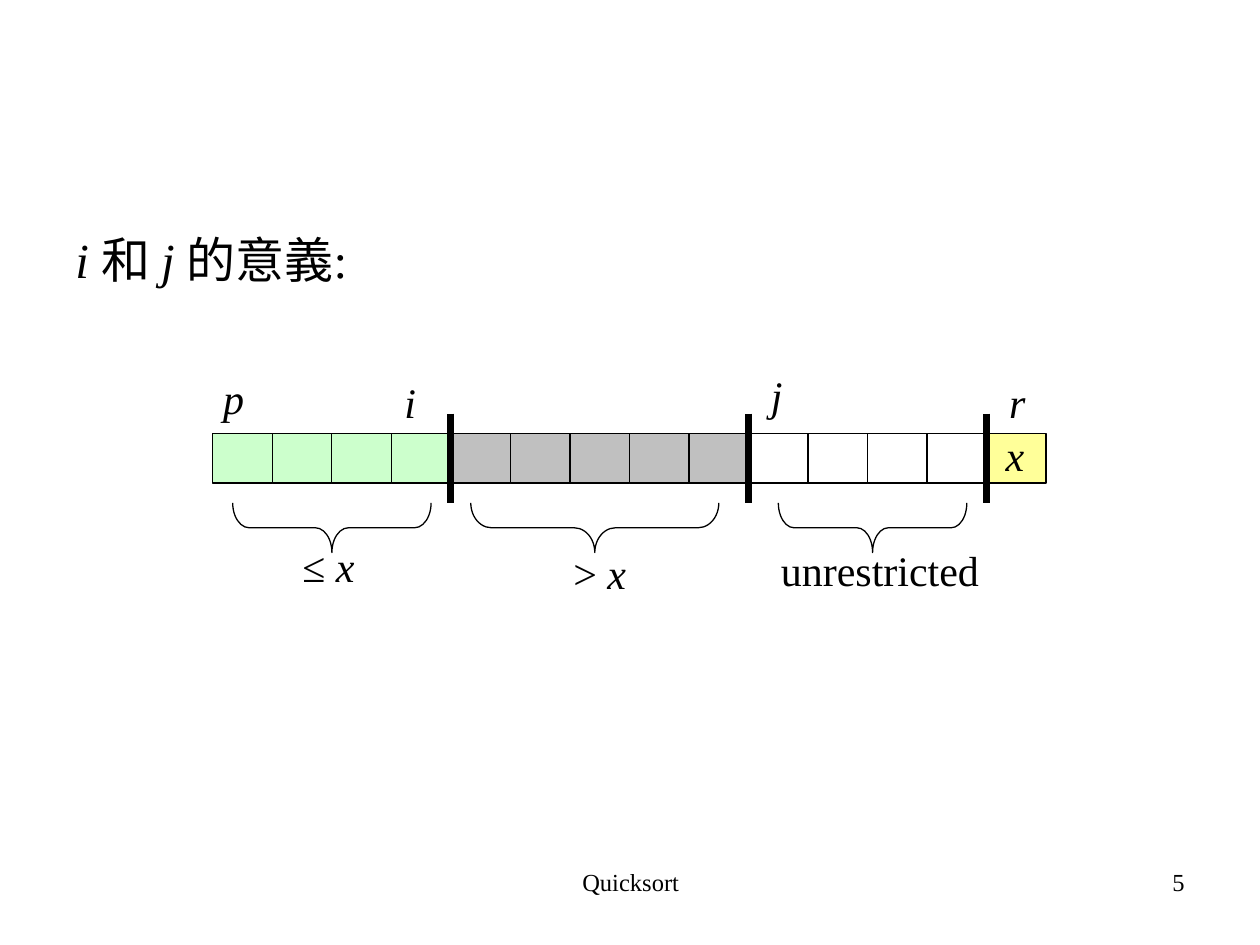
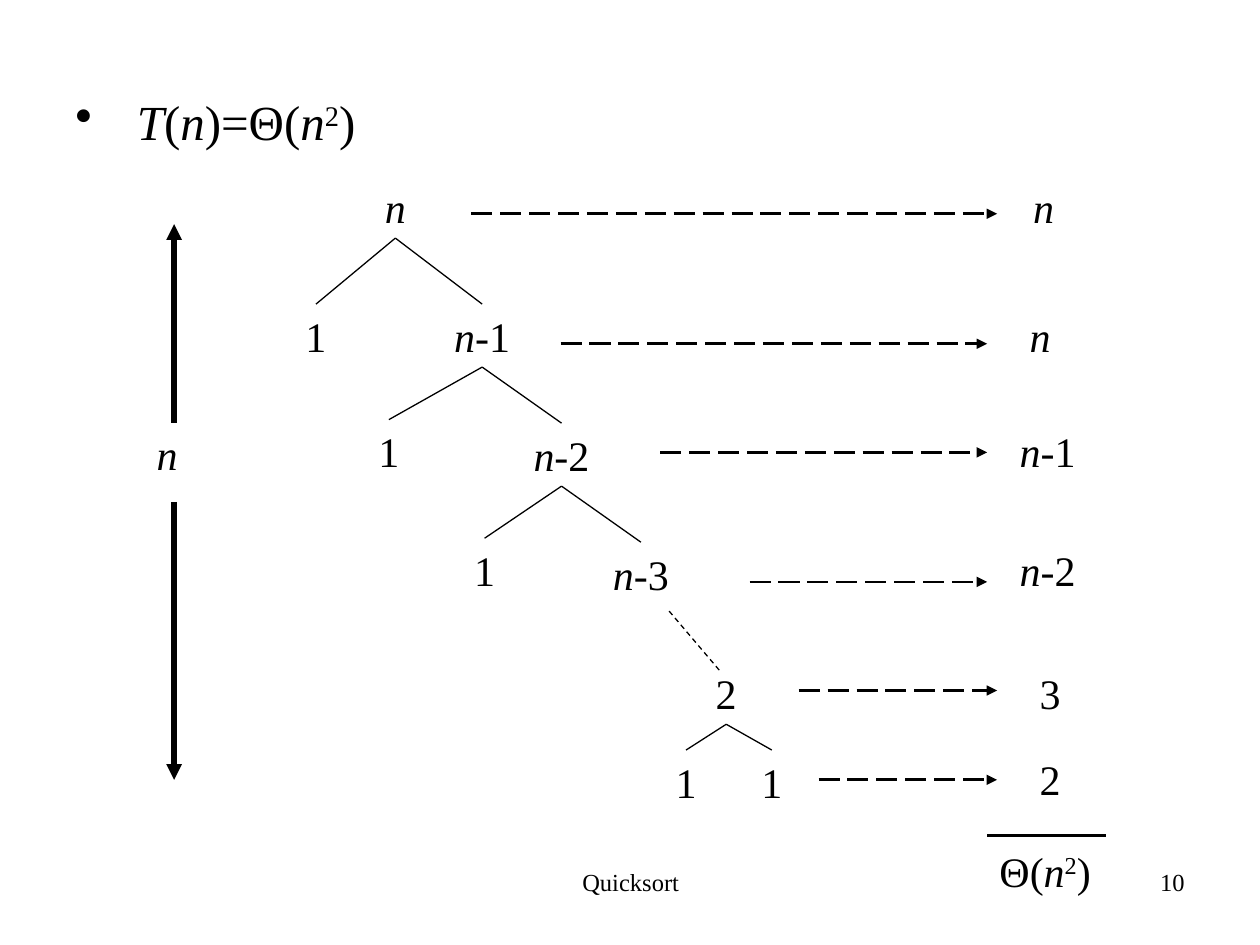
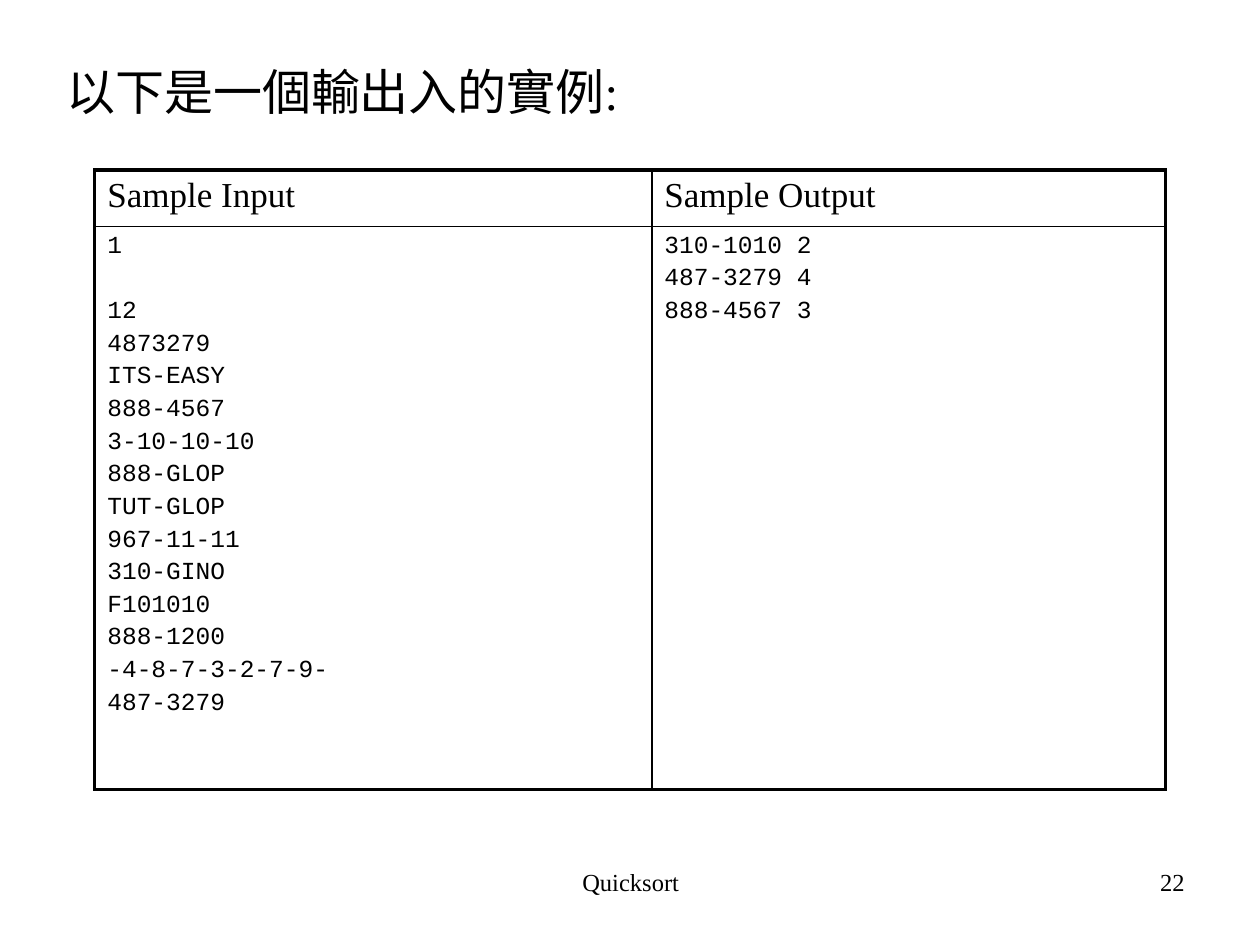
import lxml.etree
import pptx
import pptx.dml.color
import pptx.enum.dml
import pptx.enum.shapes
import pptx.enum.text
import pptx.oxml.ns
import pptx.util

Cm = pptx.util.Cm
Pt = pptx.util.Pt
qn = pptx.oxml.ns.qn
ALIGN = pptx.enum.text.PP_ALIGN
DASH = pptx.enum.dml.MSO_LINE
SHAPE = pptx.enum.shapes.MSO_SHAPE

COLORS = {
    "ink": "000000",
    "small": "CCFFCC",
    "large": "C0C0C0",
    "pivot": "FFFF99",
}
SERIF = "Times New Roman"
MONO = "Courier New"
LABEL_H = 1.27
SQUARED = [("Θ(", ""), ("n", "i"), ("2", "sup"), (")", "")]


def rgb(name):
    """Return the named colour."""
    return pptx.dml.color.RGBColor.from_string(COLORS[name])


def add_runs(p, runs, size, font=SERIF):
    """Add (text, style) runs to a paragraph; style is '', 'i' or 'sup'."""
    for text, style in runs:
        r = p.add_run()
        r.text = text
        r.font.size = Pt(size)
        r.font.name = font
        r.font.color.rgb = rgb("ink")
        r.font.italic = style == "i"
        if style == "sup":
            r.font._element.set("baseline", "30000")


def add_text(slide, left, top, width, height, runs, size, align=ALIGN.LEFT, wrap=True):
    """Add a one-paragraph text box."""
    sp = slide.shapes.add_textbox(Cm(left), Cm(top), Cm(width), Cm(height))
    tf = sp.text_frame
    tf.word_wrap = wrap
    p = tf.paragraphs[0]
    p.alignment = align
    add_runs(p, runs, size)
    return sp


def add_label(slide, center, top, runs, width=0.94):
    """Add a diagram label centred on a given x."""
    return add_text(slide, center - width / 2, top, width, LABEL_H, runs, 24,
                    ALIGN.CENTER, False)


def add_line(slide, x1, y1, x2, y2, weight=0.75, dash=None, arrow=False):
    """Add a straight line, optionally dashed or with an arrowhead."""
    line = slide.shapes.add_connector(
        pptx.enum.shapes.MSO_CONNECTOR.STRAIGHT, Cm(x1), Cm(y1), Cm(x2), Cm(y2))
    line.line.color.rgb = rgb("ink")
    line.line.width = Pt(weight)
    if dash:
        line.line.dash_style = dash
    if arrow:
        tail = lxml.etree.SubElement(line.line._get_or_add_ln(), qn("a:tailEnd"))
        tail.set("type", "triangle")
    lxml.etree.SubElement(line._element.spPr, qn("a:effectLst"))
    return line


def add_outline(slide, kind, left, top, width, height, fill=None):
    """Add a thin-lined preset shape."""
    sp = slide.shapes.add_shape(kind, Cm(left), Cm(top), Cm(width), Cm(height))
    sp.shadow.inherit = False
    sp.line.color.rgb = rgb("ink")
    sp.line.width = Pt(0.75)
    if fill:
        sp.fill.solid()
        sp.fill.fore_color.rgb = rgb(fill)
    else:
        sp.fill.background()
    return sp


def new_slide(prs, number):
    """Add a blank slide with the shared footer and its page number."""
    slide = prs.slides.add_slide(prs.slide_layouts[6])
    add_text(slide, 8.69, 17.35, 8.05, 1.32, [("Quicksort", "")], 14, ALIGN.CENTER)
    add_text(slide, 18.21, 17.35, 5.92, 1.32, [(str(number), "")], 14, ALIGN.RIGHT)
    return slide


def add_heading(slide, left, top, height, runs, bullet=False):
    """Add the body heading, optionally bulleted."""
    sp = add_text(slide, left, top, 22.9, height, runs, 28)
    if bullet:
        pPr = sp.text_frame.paragraphs[0]._p.get_or_add_pPr()
        pPr.set("marL", str(Cm(1.24)))
        pPr.set("indent", str(-Cm(1.24)))
        lxml.etree.SubElement(pPr, qn("a:buChar")).set("char", "•")


def partition_array(slide, left, top):
    """Draw the partitioned array with its bars, braces and labels."""
    cell_w, cell_h = 1.2, 1
    fills = ["small"] * 4 + ["large"] * 5 + [None] * 4 + ["pivot"]
    for i, fill in enumerate(fills):
        add_outline(slide, SHAPE.RECTANGLE, left + i * cell_w, top, cell_w, cell_h, fill)
    for i in (4, 9, 13):
        x = left + i * cell_w
        add_line(slide, x, top - 0.4, x, top + 1.4, 4)
    for center, length in ((2.4, 4), (7.7, 5), (13.3, 3.8)):
        brace = add_outline(slide, SHAPE.RIGHT_BRACE, left + center - 0.5,
                            top + 1.9 - length / 2, 1, length)
        brace.rotation = 90
        brace.adjustments[0] = length / 12
    for name, x, y in (("p", 0.42, -1.35), ("i", 3.98, -1.27), ("j", 11.37, -1.42),
                       ("r", 16.22, -1.27), ("x", 16.17, -0.21)):
        add_label(slide, left + x, top + y, [(name, "i")])
    for runs, x, y, width in (([("≤ ", ""), ("x", "i")], 2.33, 2.03, 1.8),
                              ([("> ", ""), ("x", "i")], 7.8, 2.18, 1.8),
                              ([("unrestricted", "")], 13.45, 2.11, 4.7)):
        add_label(slide, left + x, top + y, runs, width)


def add_term(slide, center, top, text):
    """Add a cost term, with n in italics."""
    runs = [("n", "i"), (text[1:], "")] if text[0] == "n" else [(text, "")]
    return add_label(slide, center, top, [run for run in runs if run[0]],
                     1.65 if len(text) > 1 else 0.94)


def recursion_tree(slide, left, top):
    """Draw the tree of subproblem sizes, with the root centred at left."""
    terms = {
        "root": ("n", 0, 0),
        "second": ("n-1", 1.75, 2.6), "leaf 1": ("1", -1.6, 2.6),
        "third": ("n-2", 3.35, 5), "leaf 2": ("1", -0.13, 4.93),
        "fourth": ("n-3", 4.95, 7.4), "leaf 3": ("1", 1.8, 7.32),
        "last": ("2", 6.67, 9.8),
        "leaf 4": ("1", 5.86, 11.59), "leaf 5": ("1", 7.59, 11.59),
    }
    nodes = {key: add_term(slide, left + x, top + y, text)
             for key, (text, x, y) in terms.items()}
    children = {"root": ("leaf 1", "second"), "second": ("leaf 2", "third"),
                "third": ("leaf 3", "fourth"), "last": ("leaf 4", "leaf 5")}
    for parent, pair in children.items():
        for child in pair:
            edge = add_line(slide, left, top, left, top)
            edge.begin_connect(nodes[parent], 2)
            edge.end_connect(nodes[child], 0)
    add_line(slide, left + 5.52, top + 8.79, left + 6.53, top + 9.98, dash=DASH.DASH)


def level_costs(slide, left, top):
    """Draw the arrows to the cost of each level and the total."""
    levels = (("n", 0, 10.6, 0.78, 11.54, 0), ("n", 1.8, 10.4, 3.4, 11.47, 2.6),
              ("n-1", 3.81, 10.4, 5.59, 11.62, 4.93),
              ("n-2", 5.61, 10.4, 8.2, 11.62, 7.32),
              ("3", 6.6, 10.6, 10.39, 11.67, 9.8), ("2", 7, 10.6, 12.19, 11.67, 11.53))
    for text, start, end, y, center, label_top in levels:
        add_line(slide, left + start, top + y, left + end, top + y, 1.5,
                 DASH.LONG_DASH, True)
        add_term(slide, left + center, top + label_top, text)
    add_line(slide, left + 10.4, top + 13.31, left + 12.8, top + 13.31, 2)
    add_label(slide, left + 11.57, top + 13.39, SQUARED, 2.5)


def tree_height(slide, left, top):
    """Draw the two arrows that mark the height of the tree."""
    add_line(slide, left, top + 4, left, top, 3, arrow=True)
    add_line(slide, left, top + 5.6, left, top + 11.2, 3, arrow=True)
    add_term(slide, left - 0.14, top + 4, "n")


def set_borders(cell, weights):
    """Set the left, right, top and bottom border widths of a cell."""
    tcPr = cell._tc.get_or_add_tcPr()
    for i, (side, weight) in enumerate(zip("LRTB", weights)):
        ln = lxml.etree.Element(qn("a:ln" + side), w=str(Pt(weight)))
        fill = lxml.etree.SubElement(ln, qn("a:solidFill"))
        lxml.etree.SubElement(fill, qn("a:srgbClr")).set("val", COLORS["ink"])
        tcPr.insert(i, ln)


def sample_table(slide, left, top):
    """Draw the table of sample input and output."""
    case = ["12", "4873279", "ITS-EASY", "888-4567", "3-10-10-10", "888-GLOP",
            "TUT-GLOP", "967-11-11", "310-GINO", "F101010", "888-1200",
            "-4-8-7-3-2-7-9-", "487-3279"]
    rows = [[[["Sample Input"]], [["Sample Output"]]],
            [[["1"], case], [["310-1010 2", "487-3279 4", "888-4567 3"]]]]
    widths, heights, styles = (11.23, 10.36), (1.14, 11.35), ((20, SERIF), (14, MONO))
    table = slide.shapes.add_table(2, 2, Cm(left), Cm(top), Cm(sum(widths)),
                                   Cm(sum(heights))).table
    table.first_row = table.horz_banding = False
    for i, row in enumerate(rows):
        table.rows[i].height = Cm(heights[i])
        size, font = styles[i]
        for j, groups in enumerate(row):
            table.columns[j].width = Cm(widths[j])
            cell = table.cell(i, j)
            cell.fill.background()
            set_borders(cell, [2.25 if outer else 1
                               for outer in (j == 0, j == 1, i == 0, i == 1)])
            tf = cell.text_frame
            for g, group in enumerate(groups):
                for k, text in enumerate(group):
                    p = tf.add_paragraph() if g or k else tf.paragraphs[0]
                    p.space_before = Pt(size * (1.53 if g and not k else 0.2))
                    add_runs(p, [(text, "")], size, font)


def main():
    """Build the three slides and save them."""
    prs = pptx.Presentation()
    prs.slide_width, prs.slide_height = Cm(25.4), Cm(19.05)

    slide = new_slide(prs, 5)
    add_heading(slide, 1.27, 4.5, 12.8,
                [("i ", "i"), ("和 ", ""), ("j ", "i"), ("的意義:", "")])
    partition_array(slide, 4.29, 8.74)

    slide = new_slide(prs, 10)
    add_heading(slide, 1.27, 1.73, 1.6,
                [("T", "i"), ("(", ""), ("n", "i"), (")=", "")] + SQUARED, True)
    recursion_tree(slide, 7.97, 3.53)
    level_costs(slide, 9.5, 3.53)
    tree_height(slide, 3.51, 4.52)

    slide = new_slide(prs, 22)
    add_heading(slide, 1.09, 1.12, 12.57, [("以下是一個輸出入的實例:", "")])
    sample_table(slide, 1.91, 3.43)

    prs.save("out.pptx")


if __name__ == "__main__":
    main()
